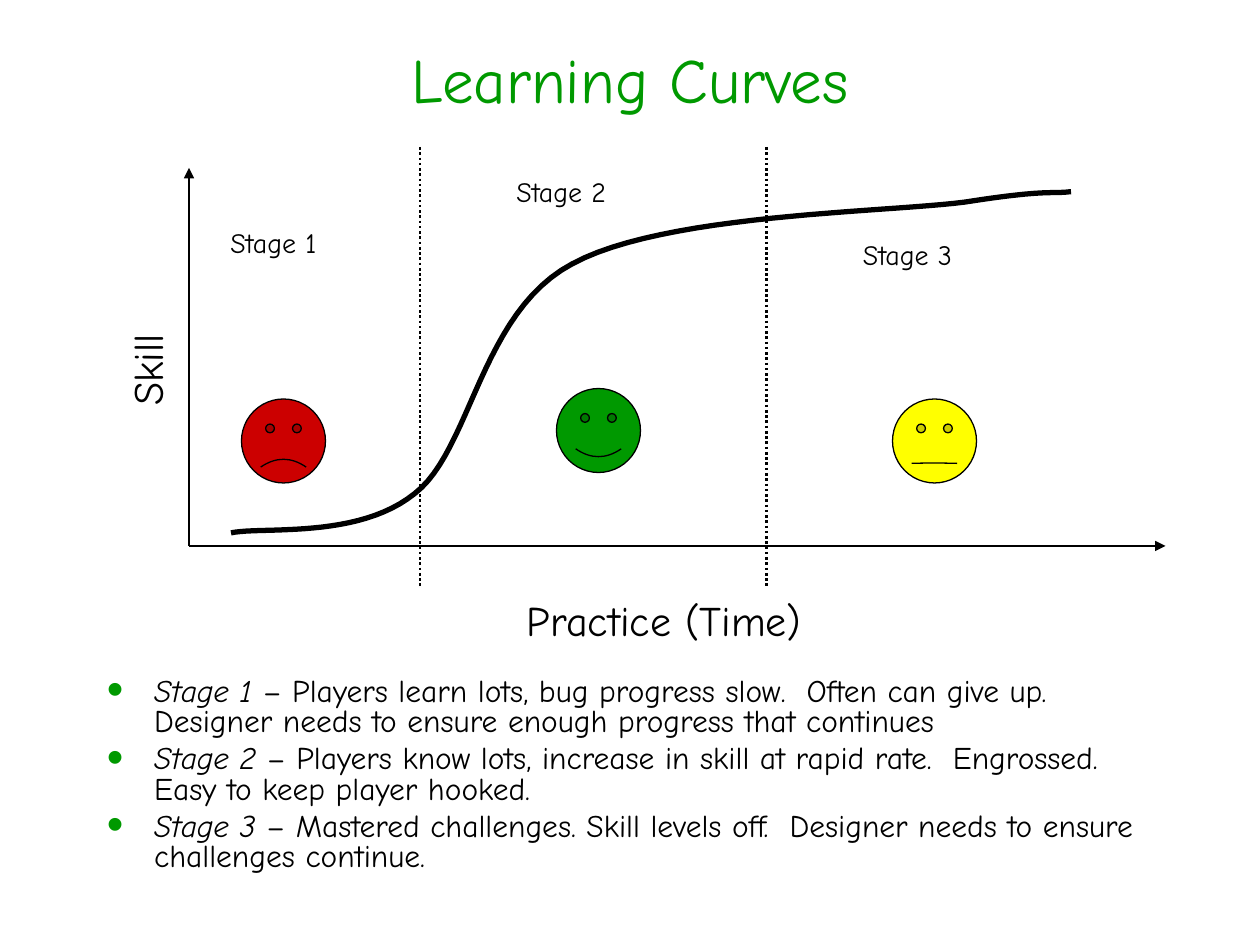
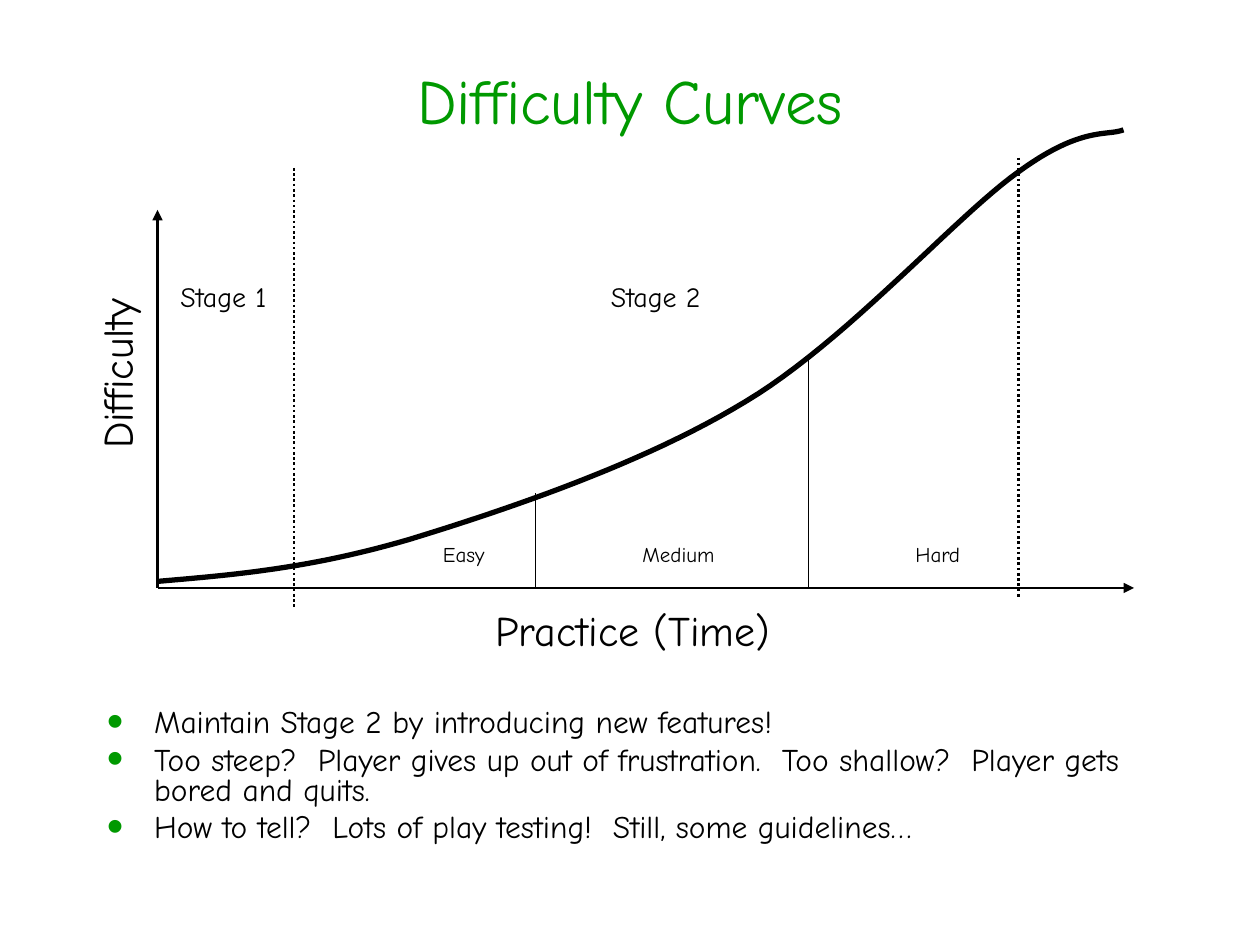
from dataclasses import dataclass

from lxml import etree
from pptx import Presentation
from pptx.dml.color import RGBColor
from pptx.enum.dml import MSO_LINE
from pptx.enum.shapes import MSO_CONNECTOR, MSO_SHAPE
from pptx.enum.text import MSO_ANCHOR, PP_ALIGN
from pptx.oxml.ns import qn
from pptx.util import Pt

PX = 9525  # EMU in one px, 96 px to the inch
FONT = "Comic Neue"
COLORS = {"green": "009900", "black": "000000", "red": "CC0000", "yellow": "FFFF00"}
STRAIGHT = MSO_CONNECTOR.STRAIGHT
SMILEY = MSO_SHAPE.SMILEY_FACE
DOTS = MSO_LINE.ROUND_DOT
CENTER, LEFT = PP_ALIGN.CENTER, PP_ALIGN.LEFT
MIDDLE, TOP = MSO_ANCHOR.MIDDLE, MSO_ANCHOR.TOP

# Sizes that both slides share
RISE, RUN = 288, 744  # axis lengths
STAGE = 336  # height of a stage border
FACE = 64
INDENT = 36
STEPS = 24  # points in each part of a curve

Point = tuple[int, int]
Box = tuple[int, int, int, int]


@dataclass
class Label:
    text: str
    box: Box
    size: int = 16
    turn: int = 0


@dataclass
class Face:
    left: int
    top: int
    color: str
    smile: float


@dataclass
class Graph:
    title: str
    head: int  # top of the title
    origin: Point
    start: Point
    bends: list[tuple[Point, Point, Point]]
    stages: list[Point]  # top ends of the dotted borders
    levels: list[Point]  # top ends of the thin borders
    labels: list[Label]
    faces: list[Face]
    body: Box
    notes: list[tuple[str, str]]  # italic lead, plain rest


def rgb(name: str) -> RGBColor:
    return RGBColor.from_string(COLORS[name])


def add_bullet(para) -> None:
    props = para._p.get_or_add_pPr()
    props.set("marL", str(INDENT * PX))
    props.set("indent", str(-INDENT * PX))
    tint = etree.SubElement(props, qn("a:buClr"))
    etree.SubElement(tint, qn("a:srgbClr"), val=COLORS["green"])
    etree.SubElement(props, qn("a:buSzPct"), val="150000")
    etree.SubElement(props, qn("a:buFont"), typeface="Arial")
    etree.SubElement(props, qn("a:buChar"), char="•")


def add_text(slide, paras: list[tuple[str, str]], box: Box, *, size: int,
             color: str = "black", align=LEFT, anchor=TOP, wrap: bool = True,
             turn: int = 0, bullet: bool = False) -> None:
    shape = slide.shapes.add_textbox(*(n * PX for n in box))
    shape.rotation = turn
    frame = shape.text_frame
    frame.word_wrap = wrap
    frame.vertical_anchor = anchor
    for i, (lead, rest) in enumerate(paras):
        para = frame.paragraphs[0] if i == 0 else frame.add_paragraph()
        para.alignment = align
        if bullet:
            para.line_spacing = 0.8
            if i:
                para.space_before = Pt(4)
            add_bullet(para)
        for words, slant in ((lead, True), (rest, False)):
            if words:
                run = para.add_run()
                run.text = words
                font = run.font
                font.name, font.size, font.italic = FONT, Pt(size), slant
                font.color.rgb = rgb(color)


def set_line(line, width: float) -> None:
    line.color.rgb = rgb("black")
    line.width = Pt(width)


def add_line(slide, begin: Point, end: Point, width: float = 1.5,
             dash=None, arrow: bool = False) -> None:
    link = slide.shapes.add_connector(STRAIGHT, *(n * PX for n in begin + end))
    set_line(link.line, width)
    if dash is not None:
        link.line.dash_style = dash
    if arrow:
        etree.SubElement(link.line._get_or_add_ln(), qn("a:tailEnd"), type="triangle")
    etree.SubElement(link._element.spPr, qn("a:effectLst"))


def add_curve(slide, start: Point, bends: list[tuple[Point, Point, Point]]) -> None:
    dots = []
    last = start
    for one, two, end in bends:
        for step in range(1, STEPS + 1):
            t = step / STEPS
            u = 1 - t
            dots.append(tuple(
                round(PX * (u**3 * a + 3 * u * u * t * b + 3 * u * t * t * c + t**3 * d))
                for a, b, c, d in zip(last, one, two, end)))
        last = end
    pen = slide.shapes.build_freeform(start[0] * PX, start[1] * PX)
    pen.add_line_segments(dots, close=False)
    curve = pen.convert_to_shape()
    curve.shadow.inherit = False
    curve.fill.background()
    set_line(curve.line, 3)


def add_face(slide, face: Face) -> None:
    shape = slide.shapes.add_shape(SMILEY, face.left * PX, face.top * PX,
                                   FACE * PX, FACE * PX)
    shape.shadow.inherit = False
    shape.adjustments[0] = face.smile
    shape.fill.solid()
    shape.fill.fore_color.rgb = rgb(face.color)
    set_line(shape.line, 0.75)


def add_graph(deck, graph: Graph) -> None:
    slide = deck.slides.add_slide(deck.slide_layouts[6])
    # Title and notes
    add_text(slide, [("", graph.title)], (72, graph.head, 816, 120), size=36,
             color="green", align=CENTER, anchor=MIDDLE)
    add_text(slide, graph.notes, graph.body, size=18, bullet=True)
    # Curve and axes
    add_curve(slide, graph.start, graph.bends)
    x, y = graph.origin
    for tip in ((x, y - RISE), (x + RUN, y)):
        add_line(slide, graph.origin, tip, arrow=True)
    # Faces, borders and labels
    for face in graph.faces:
        add_face(slide, face)
    for left, top in graph.stages:
        add_line(slide, (left, top), (left, top + STAGE), dash=DOTS)
    for left, top in graph.levels:
        add_line(slide, (left, top), (left, y), width=0.75)
    for label in graph.labels:
        add_text(slide, [("", label.text)], label.box, size=label.size,
                 wrap=False, turn=label.turn)


GRAPHS = [
    Graph(
        title="Learning Curves", head=0, origin=(144, 416), start=(176, 406),
        bends=[((200, 401), (273, 411), (316, 376)),
               ((359, 343), (366, 238), (436, 201)),
               ((506, 163), (672, 162), (735, 154)),
               ((799, 144), (800, 148), (816, 146))],
        stages=[(320, 112), (584, 112)],
        levels=[],
        labels=[Label("Practice (Time)", (392, 448, 249, 48), 24),
                Label("Skill", (69, 252, 85, 48), 24, 270),
                Label("Stage 1", (166, 167, 94, 36)),
                Label("Stage 2", (384, 128, 98, 36)),
                Label("Stage 3", (648, 176, 98, 36))],
        faces=[Face(424, 296, "green", 0.047),
               Face(184, 304, "red", -0.047),
               Face(680, 304, "yellow", -0.002)],
        body=(72, 512, 816, 184),
        notes=[("Stage 1", " – Players learn lots, bug progress slow.  Often can give up.  "
                           "Designer needs to ensure enough progress that continues"),
               ("Stage 2", " – Players know lots, increase in skill at rapid rate.  "
                           "Engrossed.  Easy to keep player hooked."),
               ("Stage 3", " – Mastered challenges. Skill levels off.  "
                           "Designer needs to ensure challenges continue.")]),
    Graph(
        title="Difficulty Curves", head=16, origin=(120, 448), start=(120, 443),
        bends=[((179, 438), (237, 433), (312, 411)),
               ((387, 388), (491, 353), (568, 306)),
               ((645, 260), (728, 165), (776, 131)),
               ((824, 96), (843, 104), (856, 99))],
        stages=[(224, 128), (776, 120)],
        levels=[(408, 376), (616, 272)],
        labels=[Label("Practice (Time)", (368, 456, 249, 48), 24),
                Label("Difficulty", (5, 244, 167, 48), 24, 270),
                Label("Stage 1", (128, 208, 94, 36)),
                Label("Stage 2", (456, 208, 98, 36)),
                Label("Easy", (328, 408, 54, 29), 12),
                Label("Medium", (480, 408, 77, 29), 12),
                Label("Hard", (688, 408, 57, 29), 12)],
        faces=[],
        body=(72, 536, 816, 120),
        notes=[("", "Maintain Stage 2 by introducing new features!"),
               ("", "Too steep?  Player gives up out of frustration.  "
                    "Too shallow?  Player gets bored and quits."),
               ("", "How to tell?  Lots of play testing!  Still, some guidelines…")]),
]


def main() -> None:
    deck = Presentation()
    deck.slide_width, deck.slide_height = 960 * PX, 720 * PX
    for graph in GRAPHS:
        add_graph(deck, graph)
    deck.save("out.pptx")


if __name__ == "__main__":
    main()
